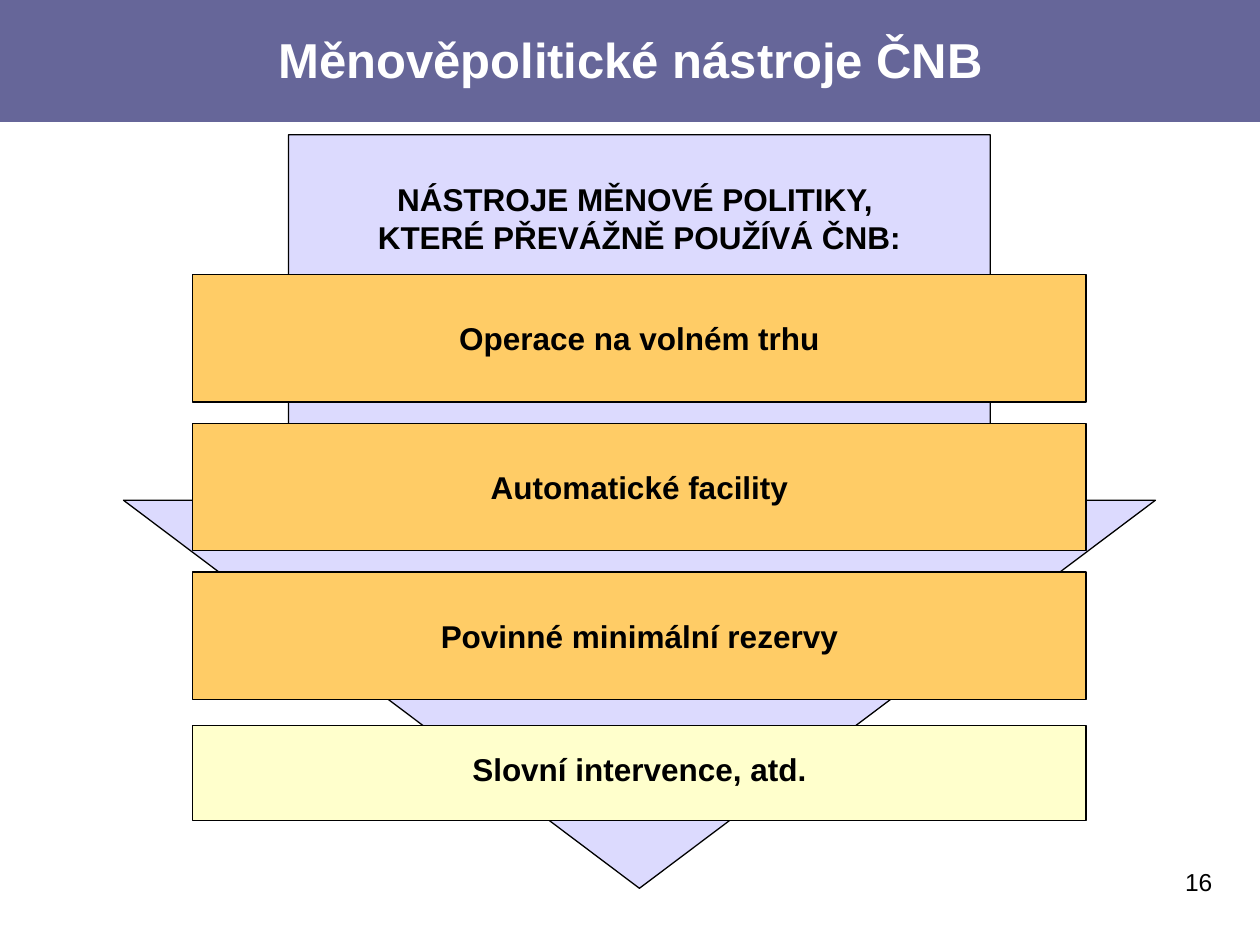
from pptx import Presentation
from pptx.dml.color import RGBColor
from pptx.enum.shapes import MSO_SHAPE
from pptx.enum.text import MSO_ANCHOR, PP_ALIGN
from pptx.util import Inches, Pt

BLACK, WHITE = "000000", "FFFFFF"
PURPLE, LAVENDER = "666699", "DCDAFE"
ORANGE, CREAM = "FFCC66", "FFFFCC"

BAR_LEFT, BAR_WIDTH, BAR_HEIGHT = 1.53, 7.09, 1.01
BAR_TOP, BAR_STEP = 2.18, 1.18


def rgb(value):
    return RGBColor.from_string(value)


def add_text(shape, lines, size, color=BLACK, bold=True,
             align=PP_ALIGN.CENTER, anchor=MSO_ANCHOR.MIDDLE):
    tf = shape.text_frame
    tf.word_wrap = True
    tf.vertical_anchor = anchor
    for i, line in enumerate(lines):
        p = tf.add_paragraph() if i else tf.paragraphs[0]
        p.alignment = align
        r = p.add_run()
        r.text = line
        r.font.name = "Arial"
        r.font.size = Pt(size)
        r.font.bold = bold
        r.font.color.rgb = rgb(color)
    return tf


def add_box(s, kind, left, top, width, height, fill, line=BLACK):
    sp = s.shapes.add_shape(kind, Inches(left), Inches(top),
                            Inches(width), Inches(height))
    sp.shadow.inherit = False
    sp.fill.solid()
    sp.fill.fore_color.rgb = rgb(fill)
    sp.line.color.rgb = rgb(line)
    sp.line.width = Pt(0.75)
    return sp


def add_bar(s, top, height, fill, text):
    sp = add_box(s, MSO_SHAPE.RECTANGLE, BAR_LEFT, top, BAR_WIDTH, height, fill)
    return add_text(sp, [text], 18)


def add_label(s, left, top, width, height, text, size, **style):
    sp = s.shapes.add_textbox(Inches(left), Inches(top),
                              Inches(width), Inches(height))
    return add_text(sp, [text], size, **style)


def main():
    prs = Presentation()
    prs.slide_width, prs.slide_height = Inches(10), Inches(7.5)
    s = prs.slides.add_slide(prs.slide_layouts[6])

    # Slide number
    add_label(s, 7.17, 6.83, 2.55, 0.52, "16", 14, bold=False,
              align=PP_ALIGN.RIGHT, anchor=MSO_ANCHOR.TOP)

    # Large arrow with the heading in its shaft
    arrow = add_box(s, MSO_SHAPE.DOWN_ARROW, 0.98, 1.07, 8.19, 5.98, LAVENDER)
    arrow.adjustments[0] = 0.68
    arrow.adjustments[1] = 0.515
    tf = add_text(arrow, ["NÁSTROJE MĚNOVÉ POLITIKY, ",
                          "KTERÉ PŘEVÁŽNĚ POUŽÍVÁ ČNB:"],
                  18, anchor=MSO_ANCHOR.TOP)
    tf.margin_top = Inches(0.36)

    # Main instruments
    instruments = ["Operace na volném trhu", "Automatické facility",
                   "Povinné minimální rezervy"]
    for i, text in enumerate(instruments):
        add_bar(s, BAR_TOP + i * BAR_STEP, BAR_HEIGHT, ORANGE, text)

    # Title band
    add_box(s, MSO_SHAPE.RECTANGLE, 0, -0.03, 10, 0.99, PURPLE, PURPLE)
    add_label(s, 0.2, -0.03, 9.61, 0.99, "Měnověpolitické nástroje ČNB", 28,
              color=WHITE)

    # Other instruments, with the text slightly above the middle
    tf = add_bar(s, 5.76, 0.75, CREAM, "Slovní intervence, atd.")
    tf.margin_bottom = Inches(0.12)

    prs.save("out.pptx")


if __name__ == "__main__":
    main()
